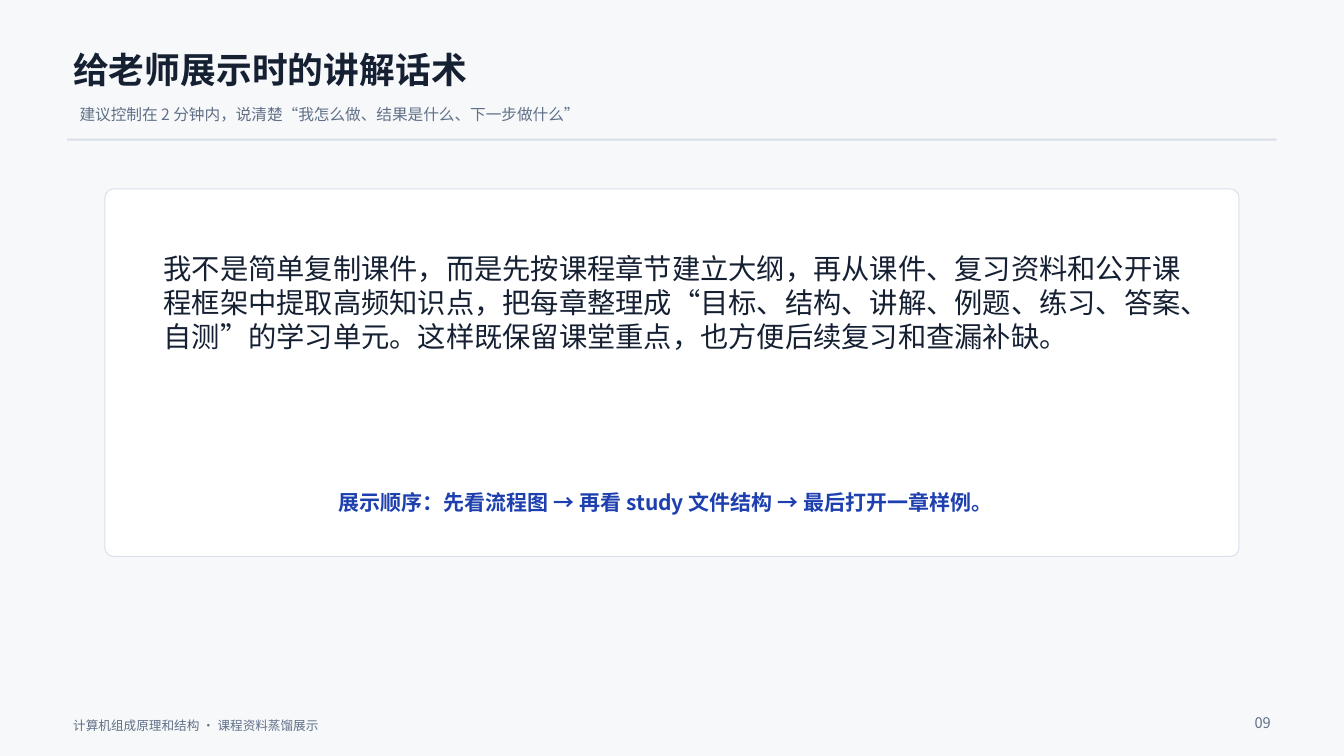
import pptx
import pptx.dml.color
import pptx.enum.shapes
import pptx.enum.text
import pptx.oxml.ns
import pptx.util
from lxml import etree

COLOURS = {
    "page": "F7F8FA",
    "card": "FFFFFF",
    "border": "D9E0EA",
    "ink": "152033",
    "muted": "607087",
    "accent": "1E40AF",
}
FONT = "Noto Sans CJK SC"
COLUMNS, ROWS = 128, 72
SHAPE = pptx.enum.shapes.MSO_SHAPE
ALIGN = pptx.enum.text.PP_ALIGN


def rgb(colour):
    return pptx.dml.color.RGBColor.from_string(COLOURS[colour])


class SlideBuilder:
    """Places styled elements on a grid of COLUMNS by ROWS."""

    def __init__(self, deck):
        self.column = deck.slide_width / COLUMNS
        self.row = deck.slide_height / ROWS
        self.slide = deck.slides.add_slide(deck.slide_layouts[6])

    def place(self, left, top, width, height):
        return (round(left * self.column), round(top * self.row),
                round(width * self.column), round(height * self.row))

    def panel(self, area, fill, border=None, radius=None):
        kind = SHAPE.RECTANGLE if radius is None else SHAPE.ROUNDED_RECTANGLE
        panel = self.slide.shapes.add_shape(kind, *self.place(*area))
        panel.shadow.inherit = False
        panel.fill.solid()
        panel.fill.fore_color.rgb = rgb(fill)
        if radius is not None:
            panel.adjustments[0] = radius
        if border:
            panel.line.color.rgb = rgb(border)
            panel.line.width = pptx.util.Pt(0.75)
        else:
            panel.line.fill.background()

    def text(self, area, wording, size, colour, bold=False, align=ALIGN.LEFT):
        frame = self.slide.shapes.add_textbox(*self.place(*area)).text_frame
        frame.word_wrap = True
        frame.margin_left = frame.margin_right = pptx.util.Inches(0.06)
        frame.margin_top = frame.margin_bottom = pptx.util.Inches(0.04)
        paragraph = frame.paragraphs[0]
        paragraph.alignment = align
        run = paragraph.add_run()
        run.text = wording
        run.font.size = pptx.util.Pt(size)
        run.font.bold = bold
        run.font.color.rgb = rgb(colour)
        run.font.name = FONT
        east_asian = etree.SubElement(run.font._element, pptx.oxml.ns.qn("a:ea"))
        east_asian.set("typeface", FONT)


def main():
    deck = pptx.Presentation()
    deck.slide_width = pptx.util.Inches(13.33)
    deck.slide_height = pptx.util.Inches(7.5)
    page = SlideBuilder(deck)

    page.panel((0, 0, COLUMNS, ROWS), "page")
    page.text((6.4, 4.2, 90, 5.8), "给老师展示时的讲解话术", 25.5, "ink", bold=True)
    page.text((7, 9.6, 76, 3.2),
              "建议控制在 2 分钟内，说清楚“我怎么做、结果是什么、下一步做什么”",
              11.2, "muted")
    page.panel((6.4, 13.2, 115.2, 0.2), "border")

    page.panel((10, 18, 108, 35), "card", border="border", radius=0.023)
    page.text((15, 23.5, 98, 19),
              "我不是简单复制课件，而是先按课程章节建立大纲，"
              "再从课件、复习资料和公开课程框架中提取高频知识点，"
              "把每章整理成“目标、结构、讲解、例题、练习、答案、自测”的学习单元。"
              "这样既保留课堂重点，也方便后续复习和查漏补缺。",
              20.2, "ink")
    page.text((15.4, 46.2, 96, 3.4),
              "展示顺序：先看流程图 → 再看 study 文件结构 → 最后打开一章样例。",
              15, "accent", bold=True, align=ALIGN.CENTER)

    page.text((6.4, 68, 52, 2.4), "计算机组成原理和结构 · 课程资料蒸馏展示", 9, "muted")
    page.text((116, 67.6, 5.6, 2.8), "09", 10.5, "muted", align=ALIGN.RIGHT)

    deck.save("out.pptx")


if __name__ == "__main__":
    main()
